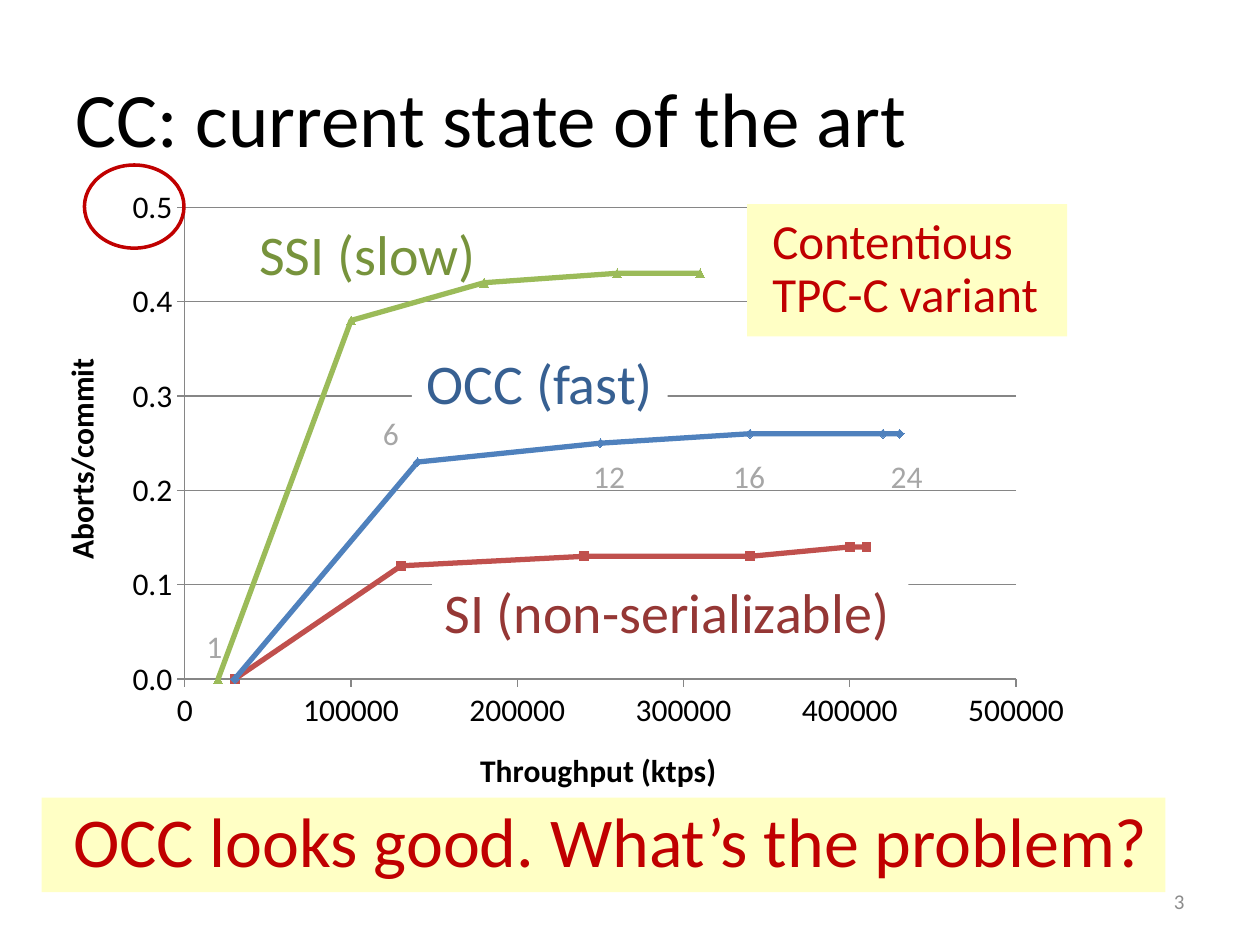
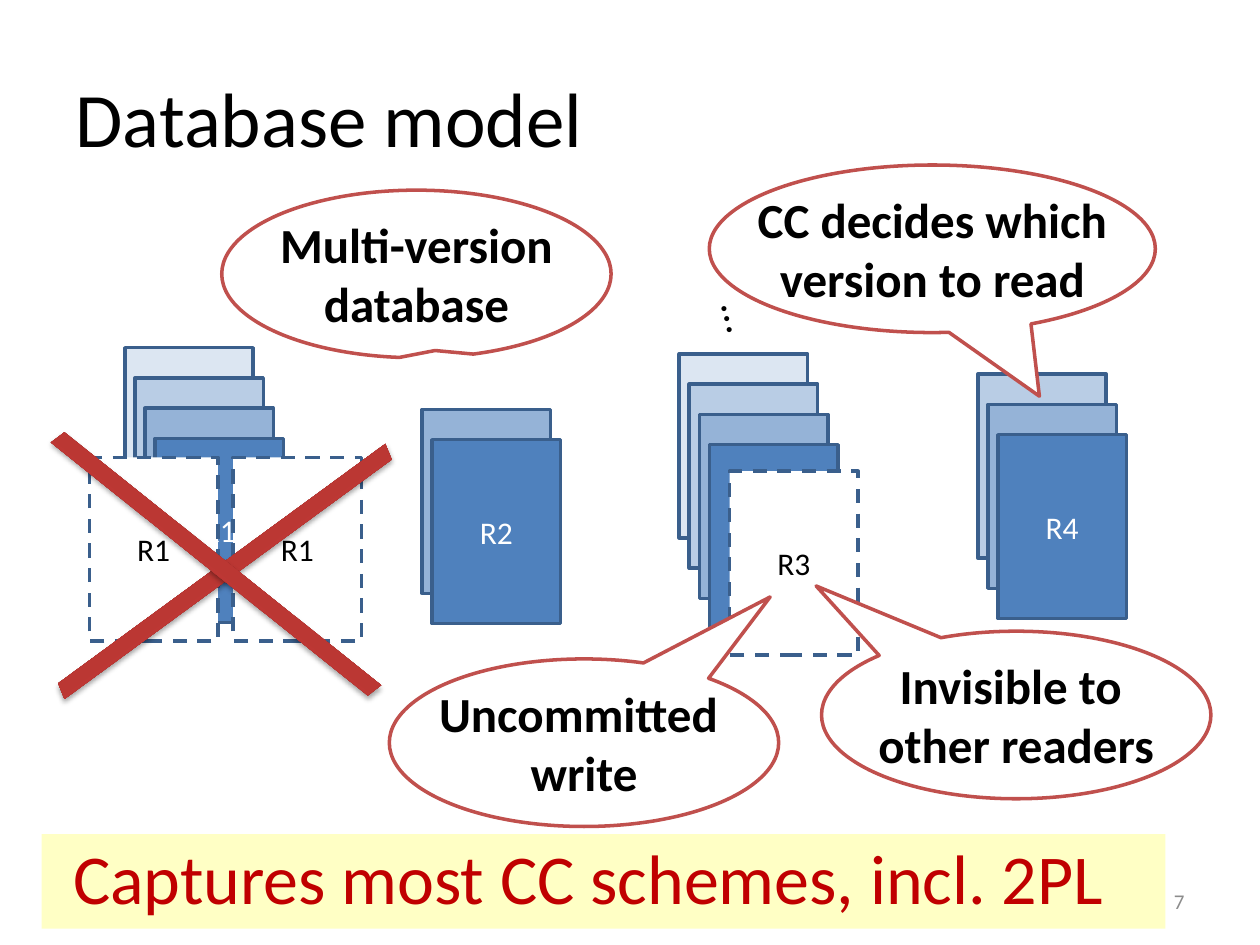
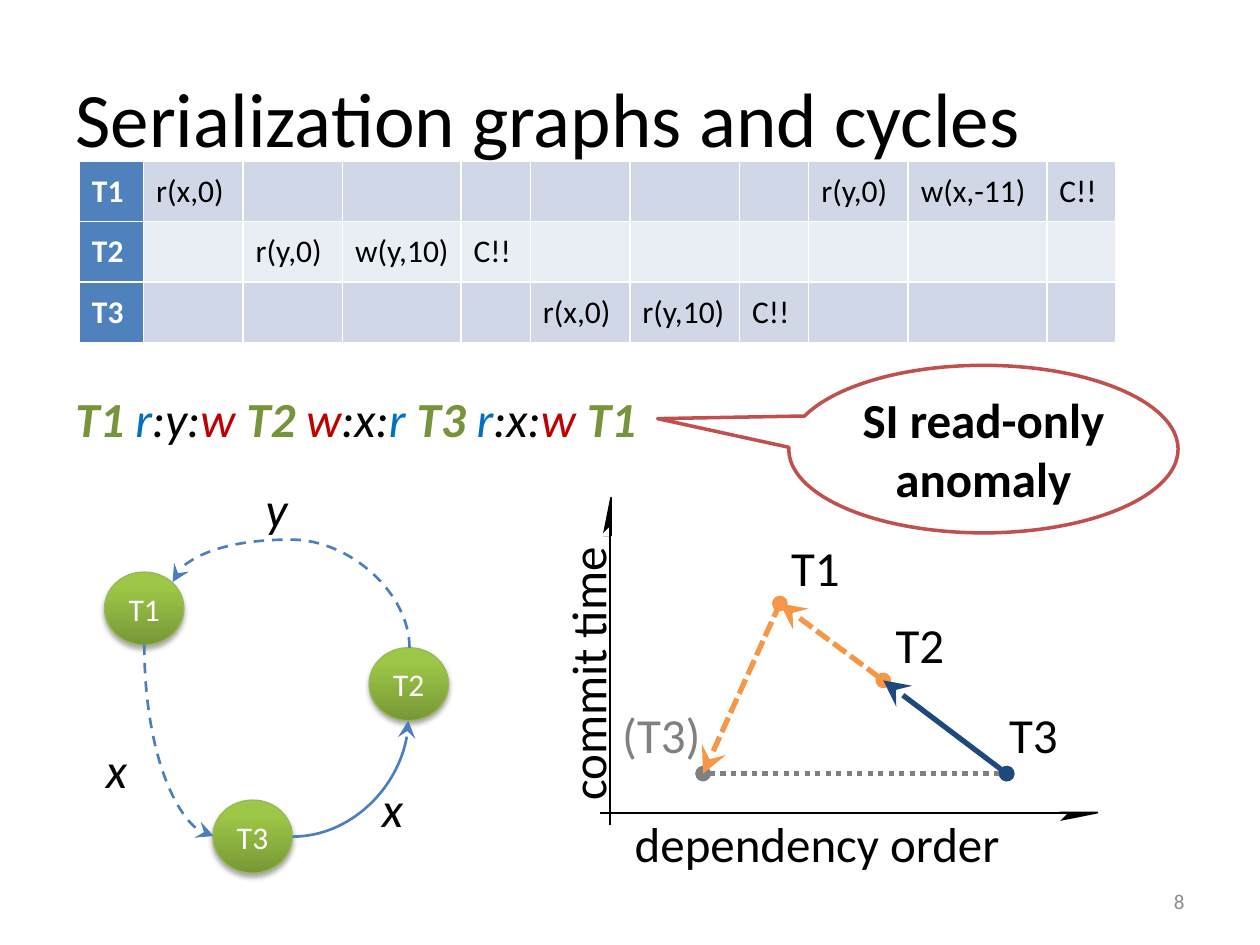
import pptx
import pptx.chart.data
import pptx.dml.color
import pptx.enum.chart
import pptx.enum.dml
import pptx.enum.shapes
import pptx.enum.text
import pptx.oxml
import pptx.oxml.ns
import pptx.util
from pptx.util import Inches, Pt

qn = pptx.oxml.ns.qn
SHAPE = pptx.enum.shapes.MSO_SHAPE
ALIGN = pptx.enum.text.PP_ALIGN
ANCHOR = pptx.enum.text.MSO_ANCHOR
DASH = pptx.enum.dml.MSO_LINE
MARKER = pptx.enum.chart.XL_MARKER_STYLE

FONT = "Calibri"
COLORS = {
    "black": "000000", "white": "FFFFFF", "gray": "808080", "point": "A6A6A6",
    "page": "8C8C8C", "grid": "868686", "red": "C00000", "note": "FFFFC5",
    "outline": "3A5F8C", "callout": "C0504D", "blue": "4F81BD", "lime": "9BBB59",
    "occ": "376092", "si": "953735", "ssi": "77933C", "read": "0070C0",
    "band": "D0D8E8", "plain": "E9EDF4", "arc": "4B7EBC", "orange": "F79646",
    "navy": "1F497D", "node edge": "98B955",
}
STACK_FILLS = ["DCE6F2", "B9CDE5", "95B3D7", "4F81BD"]
NODE_GRADIENT = ("779737", "9DC746")
CROSS_GRADIENT = ("9C2F2D", "CE3B37")

# Slide 1: aborts against throughput
CURVES = [
    ("Series 1", "blue", MARKER.DIAMOND,
     [(30000, 0), (140000, 0.23), (250000, 0.25), (340000, 0.26), (420000, 0.26), (430000, 0.26)]),
    ("Series 2", "callout", MARKER.SQUARE,
     [(30000, 0), (130000, 0.12), (240000, 0.13), (340000, 0.13), (400000, 0.14), (410000, 0.14)]),
    ("Series 3", "lime", MARKER.TRIANGLE,
     [(20000, 0), (100000, 0.38), (180000, 0.42), (260000, 0.43), (310000, 0.43), (310000, 0.43)]),
]
CURVE_LABELS = [
    ("OCC (fast)", "occ", "white", (3.27, 2.73, 2.03, 0.69)),
    ("SI (non-serializable)", "si", "white", (3.43, 4.54, 3.78, 0.69)),
    ("SSI (slow)", "ssi", None, (1.96, 1.7, 1.94, 0.69)),
]
THREAD_COUNTS = [("24", 6.97, 3.58, 0.46), ("16", 5.72, 3.58, 0.46), ("6", 2.94, 3.24, 0.33),
                 ("12", 4.61, 3.58, 0.46), ("1", 1.54, 4.93, 0.33)]

# Slide 2: record name, left, top, number of versions, label colour
RECORDS = [("R1", 0.99, 2.76, 4, "white"), ("R2", 3.35, 3.25, 2, "white"),
           ("R3", 5.39, 2.81, 4, "black"), ("R4", 7.76, 2.97, 3, "white")]
RECORD_SIZE = (1.02, 1.46)
VERSION_STEP = (0.08, 0.24)
UNCOMMITTED = [("R3", 5.79, 3.74), ("R1", 0.71, 3.63), ("R1", 1.85, 3.63)]
CROSS_BARS = [(0.16, 4.47, 143.8), (0.09, 4.41, 218.6)]
MODEL_CALLOUTS = [
    (["Uncommitted \nwrite"], (3.09, 5.23, 3.09, 1.33), (0.478, -0.87)),
    (["Invisible to \nother readers"], (6.52, 5.01, 3.09, 1.33), (-0.514, -0.77)),
    (["Multi-version", "database"], (1.76, 1.51, 3.09, 1.33), (0.048, 0.457)),
    (["CC decides which", "version to read"], (5.63, 1.31, 3.54, 1.33), (0.24, 0.88)),
]

# Slide 3: schedule, cycle and commit order
SCHEDULE = [
    ["T1", "r(x,0)", "", "", "", "", "", "", "r(y,0)", "w(x,-11)", "C!!"],
    ["T2", "", "r(y,0)", "w(y,10)", "C!!", "", "", "", "", "", ""],
    ["T3", "", "", "", "", "r(x,0)", "r(y,10)", "C!!", "", "", ""],
]
SCHEDULE_WIDTHS = [0.51, 0.79, 0.79, 0.94, 0.55, 0.79, 0.87, 0.55, 0.79, 1.1, 0.55]
CYCLE = [("T1 ", "ssi"), ("r", "read"), (":y:", "black"), ("w ", "red"), ("T2 ", "ssi"),
         ("w", "red"), (":x:", "black"), ("r ", "read"), ("T3 ", "ssi"), ("r", "read"),
         (":x:", "black"), ("w ", "red"), ("T1", "ssi")]
NODES = [("T1", 0.83, 4.54), ("T2", 2.93, 5.14), ("T3", 1.69, 6.35)]
# begin, end (before turning), turn, preset, bend, dash
ARCS = [
    ((2.05, 5.82), (2.57, 3.94), 270, "curvedConnector3", 1.649, DASH.DASH),
    ((2.32, 6.64), (3.24, 5.72), 0, "curvedConnector2", None, None),
    ((2.18, 5.6), (0.66, 6.15), 270, "curvedConnector2", None, DASH.DASH),
]
ARC_LABELS = [("x", 0.74, 5.82), ("y", 2.01, 3.75), ("x", 2.93, 6.13)]
COMMITS = {"T1": (6.19, 4.79), "T2": (7.01, 5.4), "T3": (7.99, 6.14), "(T3)": (5.58, 6.14)}
DEPENDENCIES = [
    ("(T3)", "T3", "gray", DASH.ROUND_DOT, "oval"),
    ("T1", "T2", "orange", DASH.SQUARE_DOT, "stealth"),
    ("T2", "T3", "navy", None, "stealth"),
    ("(T3)", "T1", "orange", DASH.SQUARE_DOT, "stealth"),
]
COMMIT_LABELS = [("T3", "black", (7.91, 5.54, 0.59, 0.57)), ("T2", "black", (7.01, 4.83, 0.59, 0.57)),
                 ("T1", "black", (6.18, 4.22, 0.59, 0.57)), ("(T3)", "gray", (4.84, 5.54, 0.83, 0.57))]
AXES = [((4.84, 6.55), (4.84, 3.99)), ((4.76, 6.45), (8.7, 6.45))]
# box, rotation, flipped, colour
AXIS_TIPS = [
    ((4.67, 4.07, 0.3, 0.06), 270, False, "black"), ((4.78, 4.19, 0.06, 0.06), 270, False, "white"),
    ((8.41, 6.45, 0.3, 0.06), 0, True, "black"), ((8.4, 6.46, 0.06, 0.06), 0, True, "white"),
]


def rgb(name):
    return pptx.dml.color.RGBColor.from_string(COLORS.get(name, name))


def inches(values):
    return [Inches(v) for v in values]


def style(font, size, color, bold=False, italic=False):
    font.name, font.size, font.bold, font.italic = FONT, Pt(size), bold, italic
    font.color.rgb = rgb(color)


def write(shape, paragraphs, size, color, align=ALIGN.LEFT, anchor=ANCHOR.TOP, margins=None,
          wrap=True, grow=False, spacing=None, bold=False, italic=False):
    """Fill a shape with paragraphs; a newline inside one becomes a line break."""
    frame = shape.text_frame
    frame.word_wrap, frame.vertical_anchor = wrap, anchor
    if grow:
        frame.auto_size = pptx.enum.text.MSO_AUTO_SIZE.SHAPE_TO_FIT_TEXT
    if margins:
        (frame.margin_left, frame.margin_top,
         frame.margin_right, frame.margin_bottom) = inches(margins)
    for i, text in enumerate(paragraphs):
        paragraph = frame.add_paragraph() if i else frame.paragraphs[0]
        paragraph.alignment = align
        if spacing:
            paragraph.line_spacing = spacing
        for j, piece in enumerate(text.split("\n")):
            if j:
                paragraph.add_line_break()
            run = paragraph.add_run()
            run.text = piece
            style(run.font, size, color, bold, italic)


def add_text(slide, box, text, size, color="black", **options):
    textbox = slide.shapes.add_textbox(*inches(box))
    write(textbox, [text], size, color, **options)
    return textbox


def add_block(slide, preset, box, fill=None, line=None, width=2, dash=None):
    block = slide.shapes.add_shape(preset, *inches(box))
    if fill:
        block.fill.solid()
        block.fill.fore_color.rgb = rgb(fill)
    else:
        block.fill.background()
    if line:
        block.line.color.rgb = rgb(line)
        block.line.width = Pt(width)
        if dash:
            block.line.dash_style = dash
    else:
        block.line.fill.background()
    block.shadow.inherit = False
    return block


def add_glossy(slide, preset, box, gradient, line=None):
    """A block shaded from dark bottom to light top, with a soft shadow below."""
    block = add_block(slide, preset, box, line=line, width=0.75)
    block.fill.gradient()
    block.fill.gradient_angle = 90
    for stop, color, position in zip(block.fill.gradient_stops, gradient, (0, 0.8)):
        stop.color.rgb = rgb(color)
        stop.position = position
    block._element.spPr.find(qn("a:effectLst")).append(pptx.oxml.parse_xml(
        f'<a:outerShdw {pptx.oxml.ns.nsdecls("a")} blurRad="{Pt(3.1)}" dist="{Pt(1.8)}" '
        'dir="5400000" rotWithShape="0"><a:srgbClr val="000000"><a:alpha val="35000"/>'
        '</a:srgbClr></a:outerShdw>'))
    return block


def add_line(slide, begin, end, color, width, dash=None, head=None, tail=None, curved=False):
    kind = pptx.enum.shapes.MSO_CONNECTOR
    line = slide.shapes.add_connector(kind.CURVE if curved else kind.STRAIGHT, *inches(begin + end))
    line.line.color.rgb = rgb(color)
    line.line.width = Pt(width)
    if dash:
        line.line.dash_style = dash
    ln = line._element.spPr.find(qn("a:ln"))
    for tag, arrow in (("a:headEnd", head), ("a:tailEnd", tail)):
        if arrow:
            size = "lg" if arrow == "stealth" else "med"
            ln.append(ln.makeelement(qn(tag), {"type": arrow, "w": size, "len": size}))
    line._element.spPr.append(ln.makeelement(qn("a:effectLst"), {}))
    return line


def add_arc(slide, begin, end, turn, preset, bend, dash):
    arc = add_line(slide, begin, end, "arc", 1.5, dash, tail="stealth", curved=True)
    properties = arc._element.spPr
    properties.find(qn("a:xfrm")).set("rot", str(turn * 60000))
    geometry = properties.find(qn("a:prstGeom"))
    geometry.set("prst", preset)
    if bend:
        guides = geometry.find(qn("a:avLst"))
        guides.append(guides.makeelement(
            qn("a:gd"), {"name": "adj1", "fmla": f"val {round(bend * 100000)}"}))


def add_callout(slide, lines, box, tip):
    callout = add_block(slide, SHAPE.OVAL_CALLOUT, box, "white", "callout")
    callout.adjustments[0], callout.adjustments[1] = tip
    write(callout, lines, 28, "black", ALIGN.CENTER, margins=(0, 0, 0, 0), wrap=False, bold=True)


def add_banner(slide, top, text):
    banner = add_block(slide, SHAPE.RECTANGLE, (0.33, top, 8.92, 0.75), "note")
    write(banner, [text], 40, "red", anchor=ANCHOR.MIDDLE, margins=(0.25, 0.05, 0, 0.05), spacing=0.9)


def add_slide(deck, title, number):
    slide = deck.slides.add_slide(deck.slide_layouts[5])
    heading = slide.shapes.title
    heading.left, heading.top, heading.width, heading.height = inches((0.5, 0.3, 9, 1.25))
    write(heading, [title], 44, "black", anchor=ANCHOR.MIDDLE)
    add_text(slide, (7.17, 6.95, 2.33, 0.4), number, 12, "page", align=ALIGN.RIGHT, anchor=ANCHOR.MIDDLE)
    return slide


def add_abort_chart(slide):
    data = pptx.chart.data.XyChartData()
    for name, _, _, points in CURVES:
        series = data.add_series(name)
        for x, y in points:
            series.add_data_point(x, y)
    chart = slide.shapes.add_chart(pptx.enum.chart.XL_CHART_TYPE.XY_SCATTER_LINES,
                                   *inches((0.12, 1.34, 8.58, 5.35)), data).chart
    chart.has_legend = chart.has_title = False
    style(chart.font, 18, "black")
    plot = chart.plots[0]
    plot.vary_by_categories = False
    for series, (_, color, marker, _) in zip(plot.series, CURVES):
        series.smooth = False
        series.format.line.color.rgb = rgb(color)
        series.format.line.width = Pt(3)
        series.marker.style, series.marker.size = marker, 5
        series.marker.format.fill.solid()
        series.marker.format.fill.fore_color.rgb = rgb(color)
        series.marker.format.line.color.rgb = rgb(color)
    for axis, title, top, step, number_format in (
            (chart.category_axis, "Throughput (ktps)", 500000, 100000, "0"),
            (chart.value_axis, "Aborts/commit", 0.5, 0.1, "#,##0.0")):
        axis.minimum_scale, axis.maximum_scale, axis.major_unit = 0, top, step
        axis.major_tick_mark = pptx.enum.chart.XL_TICK_MARK.OUTSIDE
        axis.tick_labels.number_format = number_format
        axis.tick_labels.number_format_is_linked = False
        axis.format.line.color.rgb = rgb("grid")
        run = axis.axis_title.text_frame.paragraphs[0].add_run()
        run.text = title
        style(run.font, 18, "black", bold=True)
    chart.category_axis.has_major_gridlines = False
    chart.value_axis.major_gridlines.format.line.color.rgb = rgb("grid")
    area = chart._chartSpace.chart.plotArea
    for old in area.findall(qn("c:layout")):
        area.remove(old)
    edges = "".join(f'<c:{tag} val="{value}"/>' for tag, value in (
        ("layoutTarget", "inner"), ("xMode", "edge"), ("yMode", "edge"),
        ("x", 0.157), ("y", 0.057), ("w", 0.769), ("h", 0.7)))
    area.insert(0, pptx.oxml.parse_xml(
        f'<c:layout {pptx.oxml.ns.nsdecls("c")}><c:manualLayout>{edges}</c:manualLayout></c:layout>'))


def add_schedule(slide):
    table = slide.shapes.add_table(len(SCHEDULE), len(SCHEDULE_WIDTHS),
                                   *inches((0.63, 1.28, sum(SCHEDULE_WIDTHS), 1.44))).table
    table.first_row, table.first_col = False, True
    for column, width in zip(table.columns, SCHEDULE_WIDTHS):
        column.width = Inches(width)
    for r, operations in enumerate(SCHEDULE):
        for c, operation in enumerate(operations):
            cell = table.cell(r, c)
            cell.vertical_anchor = ANCHOR.MIDDLE
            cell.margin_right = Inches(0.05)
            cell.fill.solid()
            cell.fill.fore_color.rgb = rgb("blue" if c == 0 else ("band", "plain")[r % 2])
            if operation:
                run = cell.text_frame.paragraphs[0].add_run()
                run.text = operation
                style(run.font, 18, "black" if c else "white", bold=c == 0)
            for i, side in enumerate("LRTB"):
                cell._tc.get_or_add_tcPr().insert(i, pptx.oxml.parse_xml(
                    f'<a:ln{side} {pptx.oxml.ns.nsdecls("a")} w="{Pt(1)}"><a:solidFill>'
                    f'<a:srgbClr val="{COLORS["white"]}"/></a:solidFill></a:ln{side}>'))


def build_state_of_the_art(deck):
    slide = add_slide(deck, "CC: current state of the art", "3")
    add_abort_chart(slide)
    for text, color, fill, box in CURVE_LABELS:
        label = add_block(slide, SHAPE.RECTANGLE, box, fill) if fill else slide.shapes.add_textbox(*inches(box))
        write(label, [text], 32, color, ALIGN.CENTER if color == "occ" else ALIGN.LEFT,
              margins=(0.1,) * 4, wrap=False, grow=True, spacing=0.9)
    add_banner(slide, 6.33, "OCC looks good. What’s the problem?")
    variant = add_block(slide, SHAPE.RECTANGLE, (5.93, 1.62, 2.54, 1.05), "note")
    write(variant, ["Contentious \nTPC-C variant"], 28, "red", anchor=ANCHOR.MIDDLE,
          margins=(0.2, 0.1, 0.2, 0.1), wrap=False, grow=True, spacing=0.9)
    for count, left, top, width in THREAD_COUNTS:
        add_text(slide, (left, top, width, 0.4), count, 18, "point", wrap=False, grow=True)
    add_block(slide, SHAPE.OVAL, (0.67, 1.31, 0.79, 0.66), line="red")


def build_database_model(deck):
    slide = add_slide(deck, "Database model", "7")
    for name, left, top, versions, color in RECORDS:
        for i, fill in enumerate(STACK_FILLS[-versions:]):
            corner = (left + i * VERSION_STEP[0], top + i * VERSION_STEP[1])
            version = add_block(slide, SHAPE.RECTANGLE, corner + RECORD_SIZE, fill, "outline")
        write(version, [name], 18, color, ALIGN.CENTER, ANCHOR.MIDDLE)
    older = add_text(slide, (5.3, 1.98, 1.02, 0.5), "...", 24, align=ALIGN.RIGHT, grow=True)
    older.rotation = 76
    for name, left, top in UNCOMMITTED:
        pending = add_block(slide, SHAPE.RECTANGLE, (left, top) + RECORD_SIZE, "white", "outline",
                            dash=DASH.DASH)
        write(pending, [name], 18, "black", ALIGN.CENTER, ANCHOR.MIDDLE)
    for left, top, angle in CROSS_BARS:
        add_glossy(slide, SHAPE.PARALLELOGRAM, (left, top, 3.25, 0.13), CROSS_GRADIENT).rotation = angle
    for callout in MODEL_CALLOUTS:
        add_callout(slide, *callout)
    add_banner(slide, 6.62, "Captures most CC schemes, incl. 2PL")


def build_serialization_graphs(deck):
    slide = add_slide(deck, "Serialization graphs and cycles", "8")
    cycle = slide.shapes.add_textbox(*inches((0.5, 3.03, 4.98, 0.57))).text_frame
    cycle.word_wrap, cycle.vertical_anchor = True, ANCHOR.MIDDLE
    for text, color in CYCLE:
        run = cycle.paragraphs[0].add_run()
        run.text = text
        style(run.font, 28, color, bold=color == "ssi", italic=True)
    for name, left, top in NODES:
        node = add_glossy(slide, SHAPE.OVAL, (left, top, 0.63, 0.58), NODE_GRADIENT, "node edge")
        write(node, [name], 18, "white", ALIGN.CENTER, ANCHOR.MIDDLE, wrap=False)
    for arc in ARCS:
        add_arc(slide, *arc)
    for item, left, top in ARC_LABELS:
        add_text(slide, (left, top, 0.37, 0.57), item, 28, align=ALIGN.CENTER, anchor=ANCHOR.MIDDLE,
                 wrap=False, grow=True, italic=True)
    for begin, end, color, dash, head in DEPENDENCIES:
        add_line(slide, COMMITS[begin], COMMITS[end], color, 3, dash, head, "oval")
    for name, color, box in COMMIT_LABELS:
        add_text(slide, box, name, 28, color, wrap=False, grow=True)
    add_text(slide, (3.54, 5.05, 2.24, 0.57), "commit time", 28, wrap=False, grow=True).rotation = 270
    add_text(slide, (4.92, 6.41, 3.13, 0.57), "dependency order", 28, align=ALIGN.CENTER,
             wrap=False, grow=True)
    for box, angle, flipped, color in AXIS_TIPS:
        tip = add_block(slide, SHAPE.RIGHT_TRIANGLE, box, color, color, 1)
        tip.rotation = angle
        if flipped:
            tip._element.spPr.find(qn("a:xfrm")).set("flipV", "1")
    for begin, end in AXES:
        add_line(slide, begin, end, "black", 1)
    add_schedule(slide)
    add_callout(slide, ["SI read-only", "anomaly"], (6.26, 2.9, 3.09, 1.33), (-0.837, -0.182))


def main():
    deck = pptx.Presentation()
    deck.slide_width, deck.slide_height = Inches(10), Inches(7.5)
    build_state_of_the_art(deck)
    build_database_model(deck)
    build_serialization_graphs(deck)
    deck.save("out.pptx")


if __name__ == "__main__":
    main()
